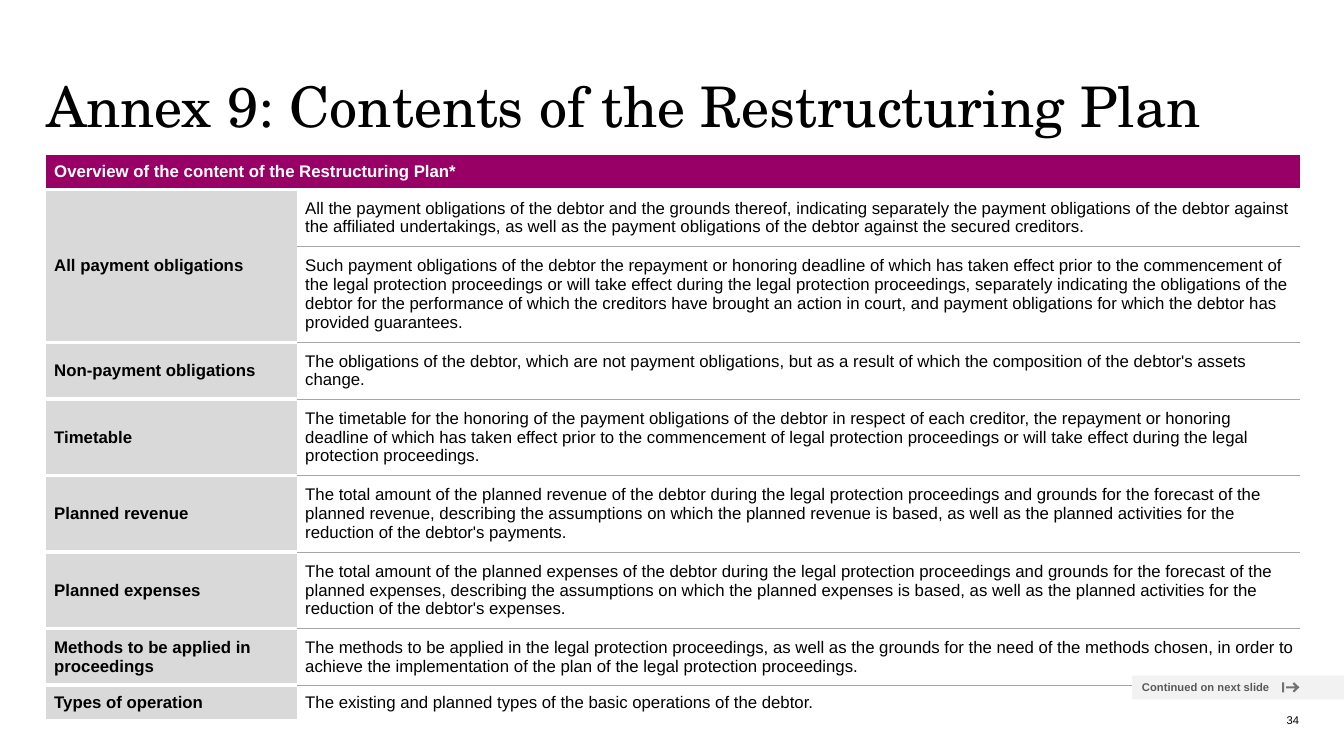
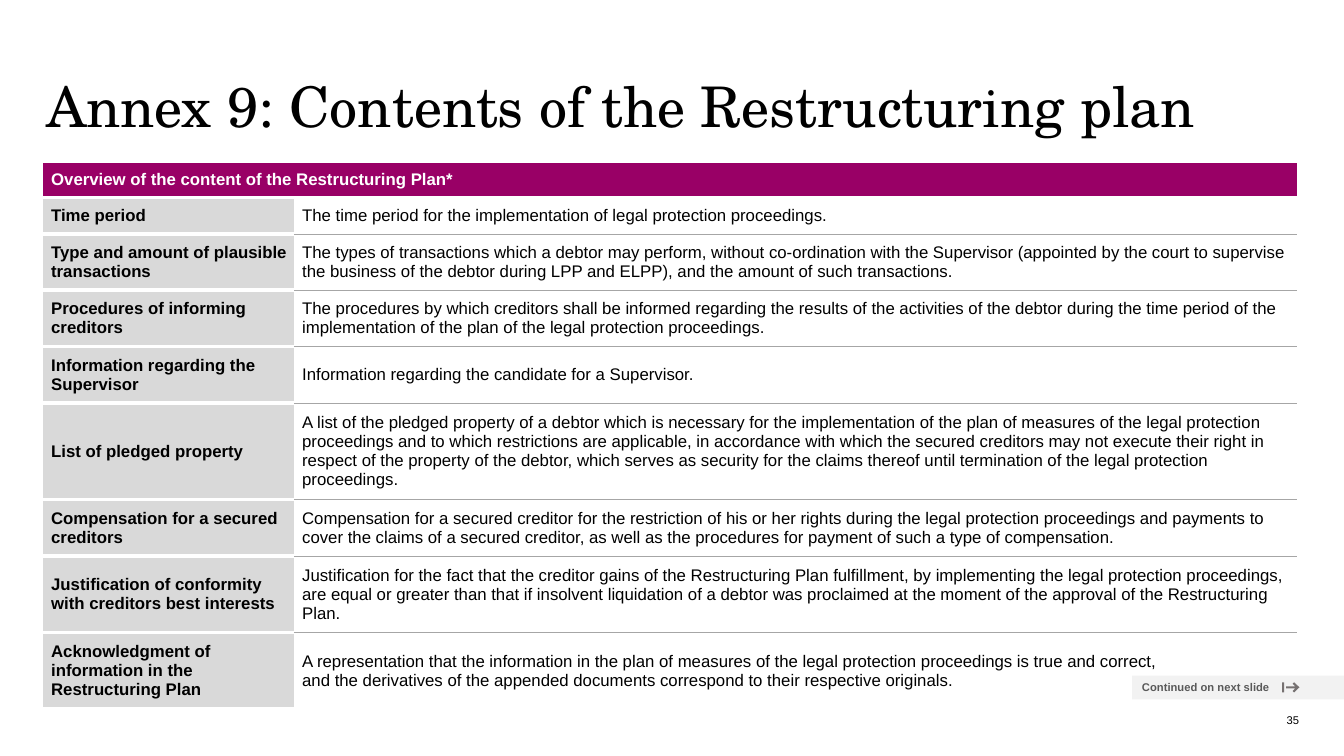
from lxml.etree import SubElement
from pptx import Presentation
from pptx.dml.color import RGBColor
from pptx.enum.shapes import MSO_SHAPE as Shape
from pptx.enum.text import MSO_ANCHOR as Anchor, PP_ALIGN as Align
from pptx.oxml.ns import qn
from pptx.util import Pt

BLACK = RGBColor(0x00, 0x00, 0x00)
WHITE = RGBColor(0xFF, 0xFF, 0xFF)
PLUM = RGBColor(0x99, 0x00, 0x66)
LABEL_GREY = RGBColor(0xD9, 0xD9, 0xD9)
RULE_GREY = RGBColor(0xA6, 0xA6, 0xA6)
TAG_GREY = RGBColor(0xF2, 0xF2, 0xF2)
TAG_TEXT = RGBColor(0x59, 0x59, 0x59)
ARROW_GREY = RGBColor(0x76, 0x71, 0x71)
BODY_FONT, TITLE_FONT = "Arial", "TeX Gyre Schola"

HEADER = "Overview of the content of the Restructuring Plan*"
CONTINUED = "Continued on next slide"
COLUMNS = (179.3, 716.4)
MARGIN = 5.75
GAP, HAIRLINE = (WHITE, 3), (RULE_GREY, 0.25)
ARROW_AT = (915.8, 487.4)
ARROW_PARTS = [
    [(0, 0), (1.4, 0), (1.4, 7.2), (0, 7.2)],
    [(12.4, 3.6), (8.6, 0), (7.6, 1), (9.4, 2.9), (2.9, 2.9),
     (2.9, 4.3), (9.4, 4.3), (7.6, 6.2), (8.6, 7.2)],
]

# Each row holds a label, its text and the number of lines it takes.
SLIDES = [
    {"title": "Annex 9: Contents of the Restructuring Plan", "number": 34,
     "table_at": (33, 109.4), "line": 14.3, "rows": [
         ("All payment obligations",
          "All the payment obligations of the debtor and the grounds thereof, indicating "
          "separately the payment obligations of the debtor against the affiliated "
          "undertakings, as well as the payment obligations of the debtor against the "
          "secured creditors.", 2),
         (None,
          "Such payment obligations of the debtor the repayment or honoring deadline of "
          "which has taken effect prior to the commencement of the legal protection "
          "proceedings or will take effect during the legal protection proceedings, "
          "separately indicating the obligations of the debtor for the performance of "
          "which the creditors have brought an action in court, and payment obligations "
          "for which the debtor has provided guarantees.", 4),
         ("Non-payment obligations",
          "The obligations of the debtor, which are not payment obligations, but as a "
          "result of which the composition of the debtor's assets change.", 2),
         ("Timetable",
          "The timetable for the honoring of the payment obligations of the debtor in "
          "respect of each creditor, the repayment or honoring deadline of which has "
          "taken effect prior to the commencement of legal protection proceedings or "
          "will take effect during the legal protection proceedings.", 3),
         ("Planned revenue",
          "The total amount of the planned revenue of the debtor during the legal "
          "protection proceedings and grounds for the forecast of the planned revenue, "
          "describing the assumptions on which the planned revenue is based, as well as "
          "the planned activities for the reduction of the debtor's payments.", 3),
         ("Planned expenses",
          "The total amount of the planned expenses of the debtor during the legal "
          "protection proceedings and grounds for the forecast of the planned expenses, "
          "describing the assumptions on which the planned expenses is based, as well as "
          "the planned activities for the reduction of the debtor's expenses.", 3),
         ("Methods to be applied in proceedings",
          "The methods to be applied in the legal protection proceedings, as well as the "
          "grounds for the need of the methods chosen, in order to achieve the "
          "implementation of the plan of the legal protection proceedings.", 2),
         ("Types of operation",
          "The existing and planned types of the basic operations of the debtor.", 1),
     ]},
    {"title": "Annex 9: Contents of the Restructuring plan", "number": 35,
     "table_at": (30.8, 115.2), "line": 13.4, "rows": [
         ("Time period",
          "The time period for the implementation of legal protection proceedings.", 1),
         ("Type and amount of plausible transactions",
          "The types of transactions which a debtor may perform, without co-ordination "
          "with the Supervisor (appointed by the court to supervise the business of the "
          "debtor during LPP and ELPP), and the amount of such transactions.", 2),
         ("Procedures of informing creditors",
          "The procedures by which creditors shall be informed regarding the results of "
          "the activities of the debtor during the time period of the implementation of "
          "the plan of the legal protection proceedings.", 2),
         ("Information regarding the Supervisor",
          "Information regarding the candidate for a Supervisor.", 2),
         ("List of pledged property",
          "A list of the pledged property of a debtor which is necessary for the "
          "implementation of the plan of measures of the legal protection proceedings "
          "and to which restrictions are applicable, in accordance with which the "
          "secured creditors may not execute their right in respect of the property of "
          "the debtor, which serves as security for the claims thereof until termination "
          "of the legal protection proceedings.", 4),
         ("Compensation for a secured creditors",
          "Compensation for a secured creditor for the restriction of his or her rights "
          "during the legal protection proceedings and payments to cover the claims of a "
          "secured creditor, as well as the procedures for payment of such a type of "
          "compensation.", 2),
         ("Justification of conformity with creditors best interests",
          "Justification for the fact that the creditor gains of the Restructuring Plan "
          "fulfillment, by implementing the legal protection proceedings, are equal or "
          "greater than that if insolvent liquidation of a debtor was proclaimed at the "
          "moment of the approval of the Restructuring Plan.", 3),
         ("Acknowledgment of information in the Restructuring Plan",
          "A representation that the information in the plan of measures of the legal "
          "protection proceedings is true and correct,\vand the derivatives of the "
          "appended documents correspond to their respective originals.", 3),
     ]},
]


def style(para, size, color, bold=False, name=BODY_FONT):
    font = para.font
    font.name, font.size, font.bold = name, Pt(size), bold
    font.color.rgb = color


def add_text(page, text, left, top, width, height):
    box = page.shapes.add_textbox(Pt(left), Pt(top), Pt(width), Pt(height))
    frame = box.text_frame
    frame.word_wrap, frame.vertical_anchor = True, Anchor.MIDDLE
    frame.margin_left = frame.margin_right = frame.margin_top = frame.margin_bottom = 0
    frame.text = text
    return frame.paragraphs[0]


def set_borders(cell, top, bottom):
    props = cell._tc.get_or_add_tcPr()
    for side, border in (("L", None), ("R", None), ("T", top), ("B", bottom)):
        line = SubElement(props, qn(f"a:ln{side}"))
        if border is None:
            SubElement(line, qn("a:noFill"))
            continue
        color, width = border
        line.set("w", str(int(Pt(width))))
        fill = SubElement(line, qn("a:solidFill"))
        SubElement(fill, qn("a:srgbClr")).set("val", str(color))


def fill_cell(cell, text, top, bottom, fill=None, color=BLACK, bold=False, right=2.9):
    set_borders(cell, top, bottom)
    if fill is None:
        cell.fill.background()
    else:
        cell.fill.solid()
        cell.fill.fore_color.rgb = fill
    cell.vertical_anchor = Anchor.MIDDLE
    cell.margin_left = cell.margin_top = cell.margin_bottom = Pt(MARGIN)
    cell.margin_right = Pt(right)
    if text:
        cell.text = text
    style(cell.text_frame.paragraphs[0], 12, color, bold)


def add_overview(page, rows, table_at, line):
    heights = [line * count + 2 * MARGIN for count in [1] + [row[2] for row in rows]]
    left, top = table_at
    table = page.shapes.add_table(len(heights), len(COLUMNS), Pt(left), Pt(top),
                                  Pt(sum(COLUMNS)), Pt(sum(heights))).table
    table.first_row = table.horz_banding = False
    for column, width in zip(table.columns, COLUMNS):
        column.width = Pt(width)
    for row, height in zip(table.rows, heights):
        row.height = Pt(height)
    for index, text in enumerate((HEADER, None)):
        fill_cell(table.cell(0, index), text, GAP, GAP, PLUM, WHITE, True, MARGIN)
    table.cell(0, 0).merge(table.cell(0, 1))
    for index, (label, text, _) in enumerate(rows, 1):
        fill_cell(table.cell(index, 0), label, GAP, GAP, LABEL_GREY, bold=True)
        fill_cell(table.cell(index, 1), text, GAP if index == 1 else HAIRLINE,
                  GAP if index == len(rows) else HAIRLINE)
        if label is None:
            table.cell(index - 1, 0).merge(table.cell(index, 0))


def add_continued_tag(page):
    tag = page.shapes.add_shape(Shape.RECTANGLE, Pt(808.6), Pt(482.6), Pt(151.4), Pt(17))
    tag.shadow.inherit = False
    tag.fill.solid()
    tag.fill.fore_color.rgb = TAG_GREY
    tag.line.fill.background()
    frame = tag.text_frame
    frame.text, frame.vertical_anchor = CONTINUED, Anchor.MIDDLE
    frame.paragraphs[0].alignment = Align.LEFT
    style(frame.paragraphs[0], 8, TAG_TEXT, True)

    parts = [[(Pt(ARROW_AT[0] + x), Pt(ARROW_AT[1] + y)) for x, y in part]
             for part in ARROW_PARTS]
    builder = page.shapes.build_freeform(*parts[0][0])
    for part in parts:
        if part is not parts[0]:
            builder.move_to(*part[0])
        builder.add_line_segments(part[1:], close=True)
    arrow = builder.convert_to_shape()
    arrow.shadow.inherit = False
    arrow.fill.solid()
    arrow.fill.fore_color.rgb = ARROW_GREY
    arrow.line.fill.background()


def main():
    """Build the two slides on the contents of the restructuring plan."""
    deck = Presentation()
    deck.slide_width, deck.slide_height = Pt(960), Pt(540)
    for content in SLIDES:
        page = deck.slides.add_slide(deck.slide_layouts[6])
        title = add_text(page, content["title"], 33, 26, 895, 103.6)
        title.line_spacing = 0.9
        style(title, 40, BLACK, name=TITLE_FONT)
        add_overview(page, content["rows"], content["table_at"], content["line"])
        number = add_text(page, str(content["number"]), 712, 509.8, 216, 9.4)
        number.alignment = Align.RIGHT
        style(number, 8, BLACK)
        add_continued_tag(page)
    deck.save("out.pptx")


if __name__ == "__main__":
    main()
